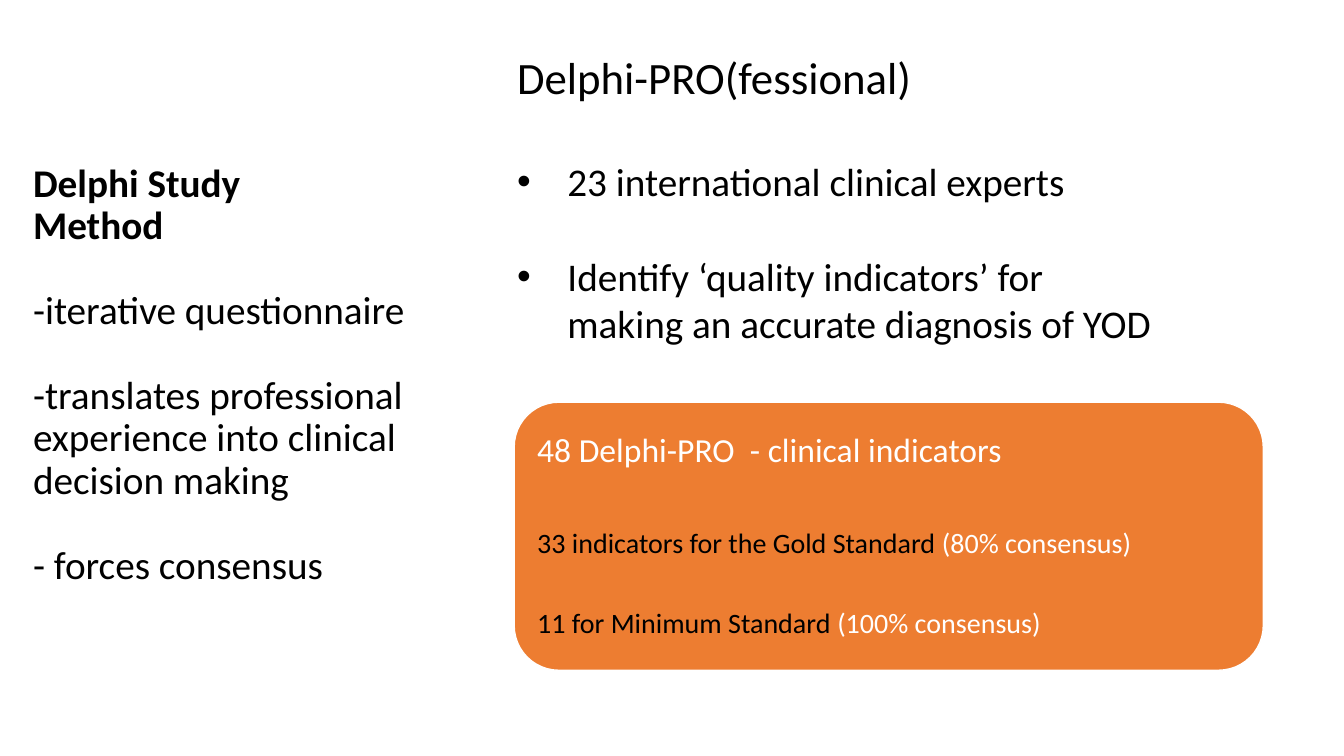
from lxml import etree
from pptx import Presentation
from pptx.dml.color import RGBColor
from pptx.enum.shapes import MSO_SHAPE
from pptx.enum.text import MSO_ANCHOR, PP_ALIGN
from pptx.oxml.ns import qn
from pptx.util import Inches, Pt

BLACK = RGBColor(0x00, 0x00, 0x00)
WHITE = RGBColor(0xFF, 0xFF, 0xFF)
ORANGE = RGBColor(0xED, 0x7D, 0x31)
FONT = "Calibri"


def add_text_frame(slide, box, anchor, margin=None):
    frame = slide.shapes.add_textbox(*map(Inches, box)).text_frame
    frame.word_wrap = True
    frame.vertical_anchor = anchor
    if margin is not None:
        frame.margin_left = frame.margin_right = Inches(margin)
        frame.margin_top = frame.margin_bottom = Inches(margin)
    return frame


def add_paragraph(frame, first, gap=0, spacing=1.0):
    paragraph = frame.paragraphs[0] if first else frame.add_paragraph()
    paragraph.alignment = PP_ALIGN.LEFT
    paragraph.line_spacing = spacing
    paragraph.space_before = Pt(gap)
    return paragraph


def add_run(paragraph, text, size, color=BLACK, bold=False):
    run = paragraph.add_run()
    run.text = text
    run.font.name = FONT
    run.font.size = Pt(size)
    run.font.color.rgb = color
    run.font.bold = bold


def add_lines(paragraph, lines, size, bold=False):
    for i, line in enumerate(lines):
        if i:
            paragraph.add_line_break()
        add_run(paragraph, line, size, bold=bold)


def set_bullet(paragraph, indent):
    properties = paragraph._p.get_or_add_pPr()
    properties.set("marL", str(Inches(indent)))
    properties.set("indent", str(-Inches(indent)))
    etree.SubElement(properties, qn("a:buFont")).set("typeface", "Arial")
    etree.SubElement(properties, qn("a:buChar")).set("char", "•")


# Left column: the study method
def add_method(slide, box):
    frame = add_text_frame(slide, box, MSO_ANCHOR.MIDDLE)
    points = [
        ["Delphi Study", "Method"],
        ["-iterative questionnaire"],
        ["-translates professional experience into clinical decision making"],
        ["- forces consensus"],
    ]
    for i, lines in enumerate(points):
        heading = i == 0
        paragraph = add_paragraph(frame, heading, 0 if heading else 30.5, 0.9)
        add_lines(paragraph, lines, 28, bold=heading)


# Upper right: heading and bullets
def add_panel(slide, box):
    frame = add_text_frame(slide, box, MSO_ANCHOR.TOP)
    add_run(add_paragraph(frame, True), "Delphi-PRO(fessional)", 32)
    bullets = [
        (39, ["23 international clinical experts"]),
        (34, ["Identify ‘quality indicators’ for ",
              "making an accurate diagnosis of YOD"]),
    ]
    for gap, lines in bullets:
        paragraph = add_paragraph(frame, False, gap)
        set_bullet(paragraph, 0.5)
        add_lines(paragraph, lines, 28)


# Lower right: orange card with the indicator counts
def add_indicators(slide, box):
    left, top, width, height = box
    card = slide.shapes.add_shape(
        MSO_SHAPE.ROUNDED_RECTANGLE, *map(Inches, box))
    card.shadow.inherit = False
    card.fill.solid()
    card.fill.fore_color.rgb = ORANGE
    card.line.color.rgb = WHITE
    card.line.width = Pt(1)

    inset = 0.13
    text_box = (left + inset, top + inset,
                width - 2 * inset, height - 2 * inset)
    frame = add_text_frame(slide, text_box, MSO_ANCHOR.MIDDLE, margin=0.1)
    counts = [
        (0, 24, [("48 Delphi-PRO  - clinical indicators", WHITE)]),
        (43, 20, [("33 indicators for the Gold Standard ", BLACK),
                  ("(80% consensus)", WHITE)]),
        (35, 20, [("11 for Minimum Standard ", BLACK),
                  ("(100% consensus)", WHITE)]),
    ]
    for i, (gap, size, parts) in enumerate(counts):
        paragraph = add_paragraph(frame, i == 0, gap, 0.9)
        for text, color in parts:
            add_run(paragraph, text, size, color)


def main():
    deck = Presentation()
    deck.slide_width = Inches(13.33)
    deck.slide_height = Inches(7.5)
    slide = deck.slides.add_slide(deck.slide_layouts[6])
    add_method(slide, (0.23, 0.57, 3.97, 6.31))
    add_indicators(slide, (5.1, 3.99, 7.43, 2.66))
    add_panel(slide, (5.03, 0.44, 7.43, 3.06))
    deck.save("out.pptx")


if __name__ == "__main__":
    main()
